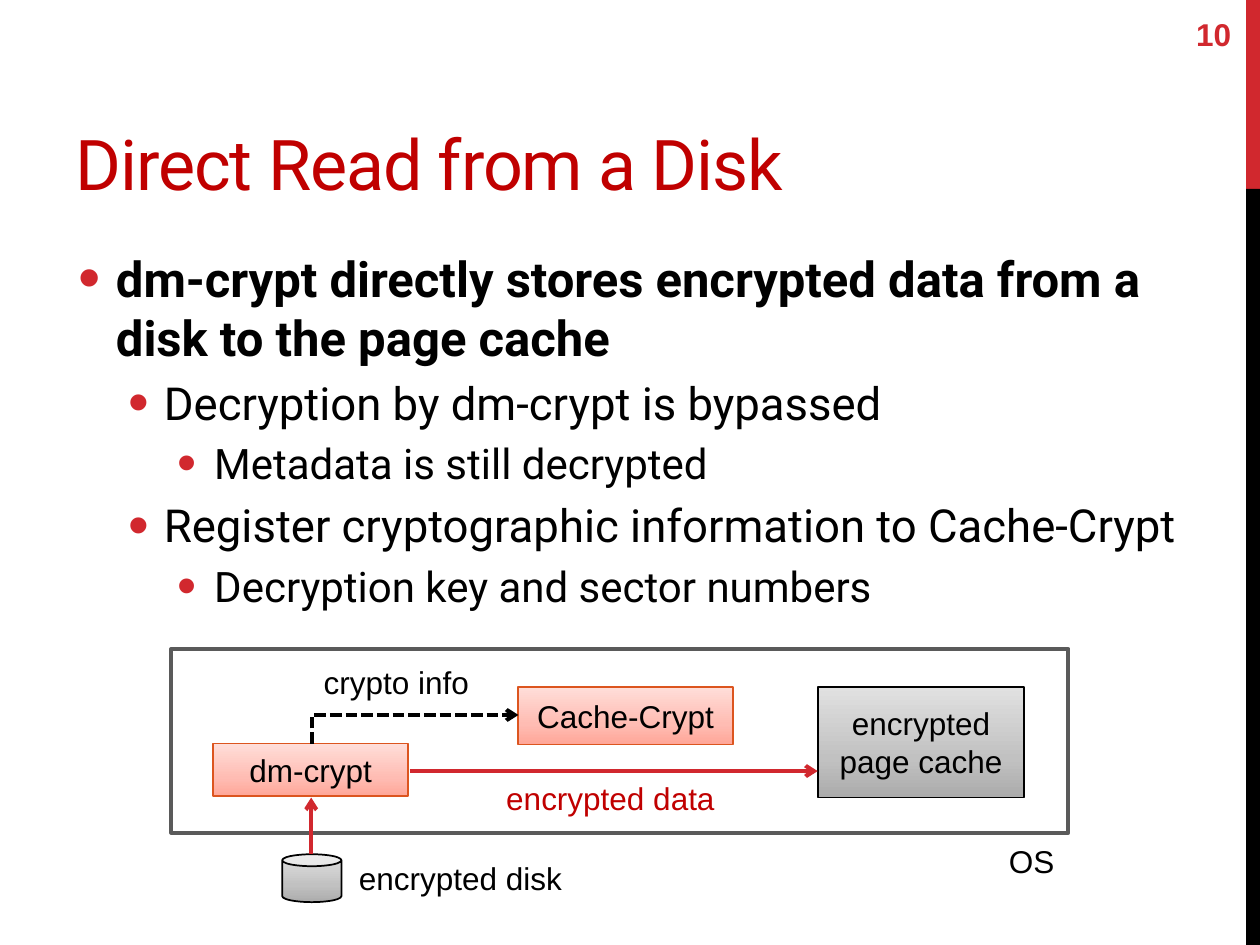
import copy
from dataclasses import dataclass
from typing import Optional

import lxml.etree
import pptx
import pptx.dml.color
import pptx.enum.dml
import pptx.enum.shapes
import pptx.enum.text
import pptx.oxml.ns
import pptx.util

Inches = pptx.util.Inches
Pt = pptx.util.Pt
qn = pptx.oxml.ns.qn
Align = pptx.enum.text.PP_ALIGN
Anchor = pptx.enum.text.MSO_ANCHOR
Kind = pptx.enum.shapes.MSO_SHAPE
Link = pptx.enum.shapes.MSO_CONNECTOR


@dataclass(frozen=True)
class Theme:
    red: str = "D1282E"
    dark_red: str = "C00000"
    black: str = "000000"
    white: str = "FFFFFF"
    gray: str = "5A5A5A"
    rust: str = "DC551F"
    rose: tuple = ((0, "FFA698"), (0.35, "FFBCB3"), (1, "FFDED9"))
    steel: tuple = ((0, "ABABAB"), (0.35, "C1C1C1"), (1, "E1E1E1"))
    head_font: str = "Roboto"
    font: str = "Arial"
    title: float = 40
    levels: tuple = (28, 26, 24)
    label: float = 18
    thin: float = 1
    thick: float = 2.25


THEME = Theme()


@dataclass(frozen=True)
class Box:
    at: tuple
    fill: object  # one colour, or a tuple of gradient stops
    line: Optional[str] = None
    weight: float = THEME.thin
    lines: tuple = ()
    kind: int = Kind.RECTANGLE


@dataclass(frozen=True)
class Label:
    at: tuple
    text: str
    color: str = THEME.black
    align: int = Align.LEFT
    bold: bool = False
    anchor: int = Anchor.TOP


@dataclass(frozen=True)
class Arrow:
    start: tuple
    end: tuple


@dataclass(frozen=True)
class Point:
    level: int
    text: str


INDENTS = ((0.3, -0.3), (0.68, -0.28), (1.08, -0.29))

POINTS = (
    Point(0, "dm-crypt directly stores encrypted data from a disk to the page cache"),
    Point(1, "Decryption by dm-crypt is bypassed"),
    Point(2, "Metadata is still decrypted"),
    Point(1, "Register cryptographic information to Cache-Crypt"),
    Point(2, "Decryption key and sector numbers"),
)

BOXES = (
    Box((9.89, 0, 0.11, 1.5), THEME.red),
    Box((9.89, 1.5, 0.11, 6), THEME.black),
    Box((1.36, 5.15, 7.12, 1.46), THEME.white, THEME.gray, THEME.thick),
    Box((4.11, 5.45, 1.71, 0.46), THEME.rose, THEME.rust, lines=("Cache-Crypt",)),
    Box((6.49, 5.45, 1.64, 0.88), THEME.steel, THEME.black,
        lines=("encrypted", "page cache")),
    Box((1.69, 5.9, 1.55, 0.42), THEME.rose, THEME.rust, lines=("dm-crypt",)),
    Box((2.24, 6.78, 0.47, 0.38), THEME.steel, THEME.black, kind=Kind.CAN),
)

LABELS = (
    Label((9.12, 0.07, 0.75, 0.4), "10", THEME.red, Align.RIGHT, True, Anchor.MIDDLE),
    Label((3.91, 6.13, 1.87, 0.4), "encrypted data", THEME.dark_red, Align.CENTER),
    Label((7.91, 6.63, 0.57, 0.4), "OS"),
    Label((2.75, 6.77, 1.83, 0.4), "encrypted disk"),
    Label((2.47, 5.21, 1.37, 0.4), "crypto info"),
)

ARROWS = (
    Arrow((2.47, 6.78), (2.47, 6.33)),
    Arrow((3.25, 6.12), (6.49, 6.12)),
)


def rgb(code: str):
    return pptx.dml.color.RGBColor.from_string(code)


def place(shape, at: tuple) -> None:
    shape.left, shape.top, shape.width, shape.height = map(Inches, at)


def add_run(para, text: str, size: float, color: str = THEME.black,
            face: str = THEME.font, bold: bool = False):
    run = para.add_run()
    run.text = text
    font = run.font
    font.size, font.name, font.bold = Pt(size), face, bold
    font.color.rgb = rgb(color)
    return run


def paint(shape, fill) -> None:
    """Fill with one colour, or with gradient stops running from bottom to top."""
    if isinstance(fill, str):
        shape.fill.solid()
        shape.fill.fore_color.rgb = rgb(fill)
        return
    shape.fill.gradient()
    shape.fill.gradient_angle = 90
    stops = shape._element.spPr.find(".//" + qn("a:gsLst"))
    while len(stops) < len(fill):
        stops.append(copy.deepcopy(stops[-1]))
    for stop, (spot, color) in zip(shape.fill.gradient_stops, fill):
        stop.position = spot
        stop.color.rgb = rgb(color)


def draw_box(slide, box: Box) -> None:
    shape = slide.shapes.add_shape(box.kind, *map(Inches, box.at))
    shape.shadow.inherit = False
    paint(shape, box.fill)
    if box.line:
        shape.line.color.rgb = rgb(box.line)
        shape.line.width = Pt(box.weight)
    else:
        shape.line.fill.background()
    frame = shape.text_frame
    frame.vertical_anchor = Anchor.MIDDLE
    for i, text in enumerate(box.lines):
        para = frame.add_paragraph() if i else frame.paragraphs[0]
        para.alignment = Align.CENTER
        add_run(para, text, THEME.label)


def draw_label(slide, label: Label) -> None:
    frame = slide.shapes.add_textbox(*map(Inches, label.at)).text_frame
    frame.word_wrap = False
    frame.vertical_anchor = label.anchor
    para = frame.paragraphs[0]
    para.alignment = label.align
    add_run(para, label.text, THEME.label, label.color, bold=label.bold)


def draw_arrow(slide, arrow: Arrow, color: str = THEME.red, kind: int = Link.STRAIGHT):
    link = slide.shapes.add_connector(kind, *map(Inches, arrow.start + arrow.end))
    link.line.color.rgb = rgb(color)
    link.line.width = Pt(THEME.thick)
    props = link._element.spPr
    lxml.etree.SubElement(props.find(qn("a:ln")), qn("a:tailEnd"), type="arrow")
    lxml.etree.SubElement(props, qn("a:effectLst"))
    return link


def draw_bend(slide) -> None:
    """Dashed one-corner link; its ends are given before a quarter turn."""
    link = draw_arrow(slide, Arrow((3.41, 6.61), (3.18, 4.97)), THEME.black, Link.ELBOW)
    link.line.dash_style = pptx.enum.dml.MSO_LINE.SQUARE_DOT
    props = link._element.spPr
    props.find(qn("a:prstGeom")).set("prst", "bentConnector2")
    props.find(qn("a:xfrm")).set("rot", str(90 * 60000))


def set_bullet(para, level: int) -> None:
    props = para._p.get_or_add_pPr()
    margin, indent = INDENTS[level]
    props.set("marL", str(Inches(margin)))
    props.set("indent", str(Inches(indent)))
    color = lxml.etree.SubElement(props, qn("a:buClr"))
    lxml.etree.SubElement(color, qn("a:srgbClr"), val=THEME.red)
    lxml.etree.SubElement(props, qn("a:buSzPct"), val="130000")
    lxml.etree.SubElement(props, qn("a:buFont"), typeface=THEME.font)
    lxml.etree.SubElement(props, qn("a:buChar"), char="•")


def write_title(shape) -> None:
    place(shape, (0.5, 0.17, 9.02, 1.5))
    frame = shape.text_frame
    frame.auto_size = pptx.enum.text.MSO_AUTO_SIZE.NONE
    frame.vertical_anchor = Anchor.BOTTOM
    para = frame.paragraphs[0]
    para.alignment = Align.LEFT
    run = add_run(para, "Direct Read from a Disk", THEME.title,
                  THEME.dark_red, THEME.head_font)
    run.font._element.set("spc", "-60")


def write_body(shape) -> None:
    place(shape, (0.5, 1.92, 9.02, 5.18))
    frame = shape.text_frame
    frame.auto_size = pptx.enum.text.MSO_AUTO_SIZE.NONE
    frame.margin_left = frame.margin_right = Inches(0.12)
    for i, point in enumerate(POINTS):
        para = frame.add_paragraph() if i else frame.paragraphs[0]
        para.level = point.level
        if point.level == 0:
            para.space_before = Pt(6)
        set_bullet(para, point.level)
        add_run(para, point.text, THEME.levels[point.level],
                face=THEME.head_font, bold=point.level == 0)


def main() -> None:
    deck = pptx.Presentation()
    deck.slide_width, deck.slide_height = Inches(10), Inches(7.5)
    slide = deck.slides.add_slide(deck.slide_layouts[1])
    write_title(slide.shapes.title)
    write_body(slide.placeholders[1])
    for box in BOXES:
        draw_box(slide, box)
    for arrow in ARROWS:
        draw_arrow(slide, arrow)
    draw_bend(slide)
    for label in LABELS:
        draw_label(slide, label)
    deck.save("out.pptx")


if __name__ == "__main__":
    main()
